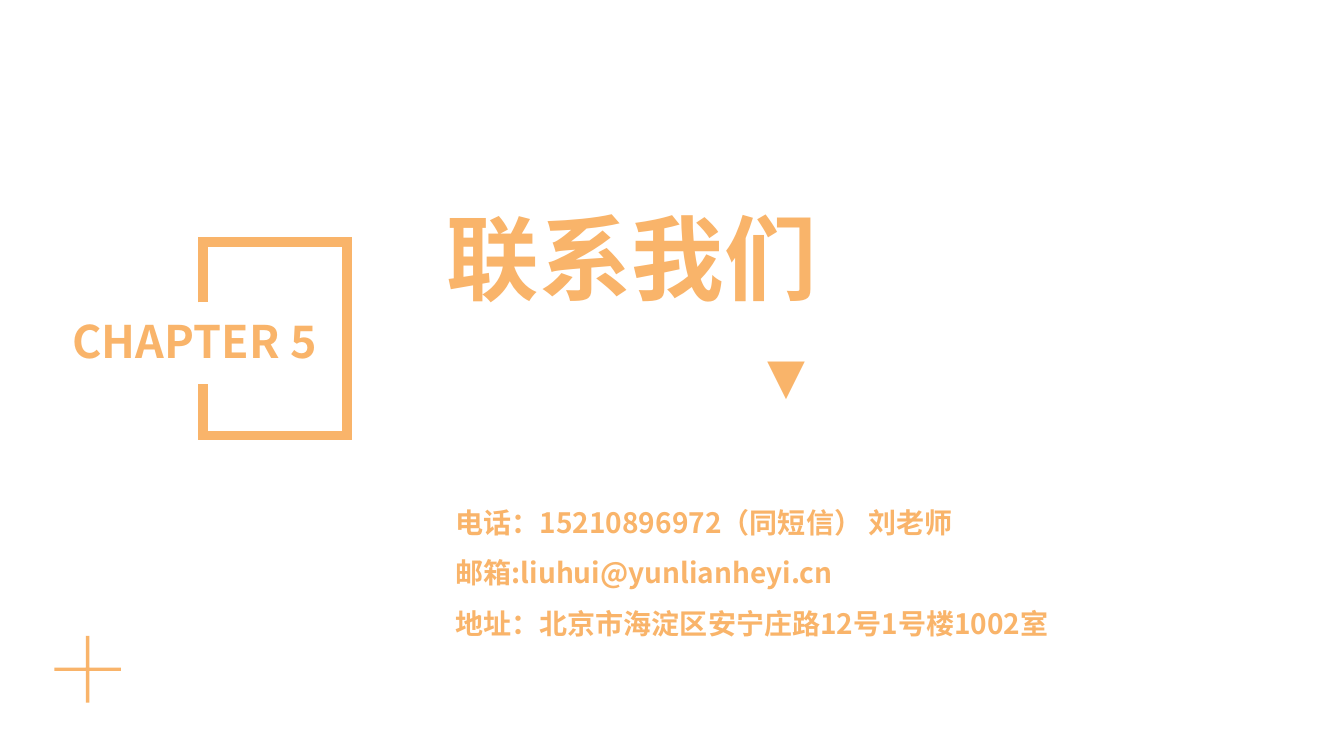
import pptx
import pptx.util
import pptx.dml.color
import pptx.enum.shapes
import pptx.enum.text
import pptx.oxml.ns
from lxml import etree

Inches = pptx.util.Inches
Align = pptx.enum.text.PP_ALIGN
qn = pptx.oxml.ns.qn
FONT = "Noto Sans CJK SC"
COLORS = {"accent": "F9B46A", "back": "FFFFFF"}


def color(name):
    return pptx.dml.color.RGBColor.from_string(COLORS[name])


def write(shape, lines, size, align, space=1.0, wrap=True):
    """Fill a text shape with bold accent lines."""
    frame = shape.text_frame
    frame.auto_size = pptx.enum.text.MSO_AUTO_SIZE.NONE
    frame.word_wrap = wrap
    frame.vertical_anchor = pptx.enum.text.MSO_ANCHOR.TOP
    frame.text = "\n".join(lines)
    for para in frame.paragraphs:
        para.alignment = align
        para.line_spacing = space
        font = para.font
        font.size = pptx.util.Pt(size)
        font.bold = True
        font.color.rgb = color("accent")
        font.name = FONT
        # East Asian typeface follows the latin one
        latin = para._p.pPr.find(qn("a:defRPr")).find(qn("a:latin"))
        east = etree.Element(qn("a:ea"), typeface=FONT)
        latin.addnext(east)


def add_title(slide, text, box):
    title = slide.shapes.title
    title.left, title.top, title.width, title.height = map(Inches, box)
    write(title, [text], 66, Align.CENTER, 1.2)


def add_text(slide, lines, box, size, align, **style):
    shape = slide.shapes.add_textbox(*map(Inches, box))
    write(shape, lines, size, align, **style)


def add_frame(slide, points, width):
    """Draw an open outline with sharp corners."""
    points = [(Inches(x), Inches(y)) for x, y in points]
    form = slide.shapes.build_freeform(*points[0])
    form.add_line_segments(points[1:], close=False)
    shape = form.convert_to_shape()
    shape.shadow.inherit = False
    shape.fill.background()
    shape.line.color.rgb = color("accent")
    shape.line.width = pptx.util.Pt(width)
    line = shape._element.spPr.find(qn("a:ln"))
    etree.SubElement(line, qn("a:miter"), lim="800000")


def add_plus(slide, box):
    kind = pptx.enum.shapes.MSO_SHAPE.CROSS
    shape = slide.shapes.add_shape(kind, *map(Inches, box))
    shape.adjustments[0] = 0.474
    shape.shadow.inherit = False
    shape.fill.solid()
    shape.fill.fore_color.rgb = color("accent")
    shape.line.fill.background()


def main():
    deck = pptx.Presentation()
    deck.slide_width, deck.slide_height = Inches(13.33), Inches(7.5)
    slide = deck.slides.add_slide(deck.slide_layouts[5])
    slide.background.fill.solid()
    slide.background.fill.fore_color.rgb = color("back")

    # Chapter mark
    left, top, right, foot = 2.01, 2.4, 3.44, 4.32
    add_frame(slide, [(left, 3), (left, top), (right, top),
                      (right, foot), (left, foot), (left, 3.81)], 7)
    add_text(slide, ["CHAPTER 5"], (0.48, 3.06, 2.76, 0.64), 32,
             Align.RIGHT, wrap=False)
    add_plus(slide, (0.54, 6.31, 0.66, 0.66))

    # Title and pointer
    add_title(slide, "联系我们", (3.9, 1.73, 4.73, 2.65))
    add_text(slide, ["▾"], (5.04, 2.99, 3.05, 1.09), 54, Align.RIGHT,
             space=1.2)

    # Contact details
    add_text(slide, ["电话：15210896972（同短信） 刘老师",
                     "邮箱:liuhui@yunlianheyi.cn",
                     "地址：北京市海淀区安宁庄路12号1号楼1002室"],
             (4.42, 4.8, 6.19, 1.56), 20, Align.LEFT, space=1.5)

    deck.save("out.pptx")


if __name__ == "__main__":
    main()
